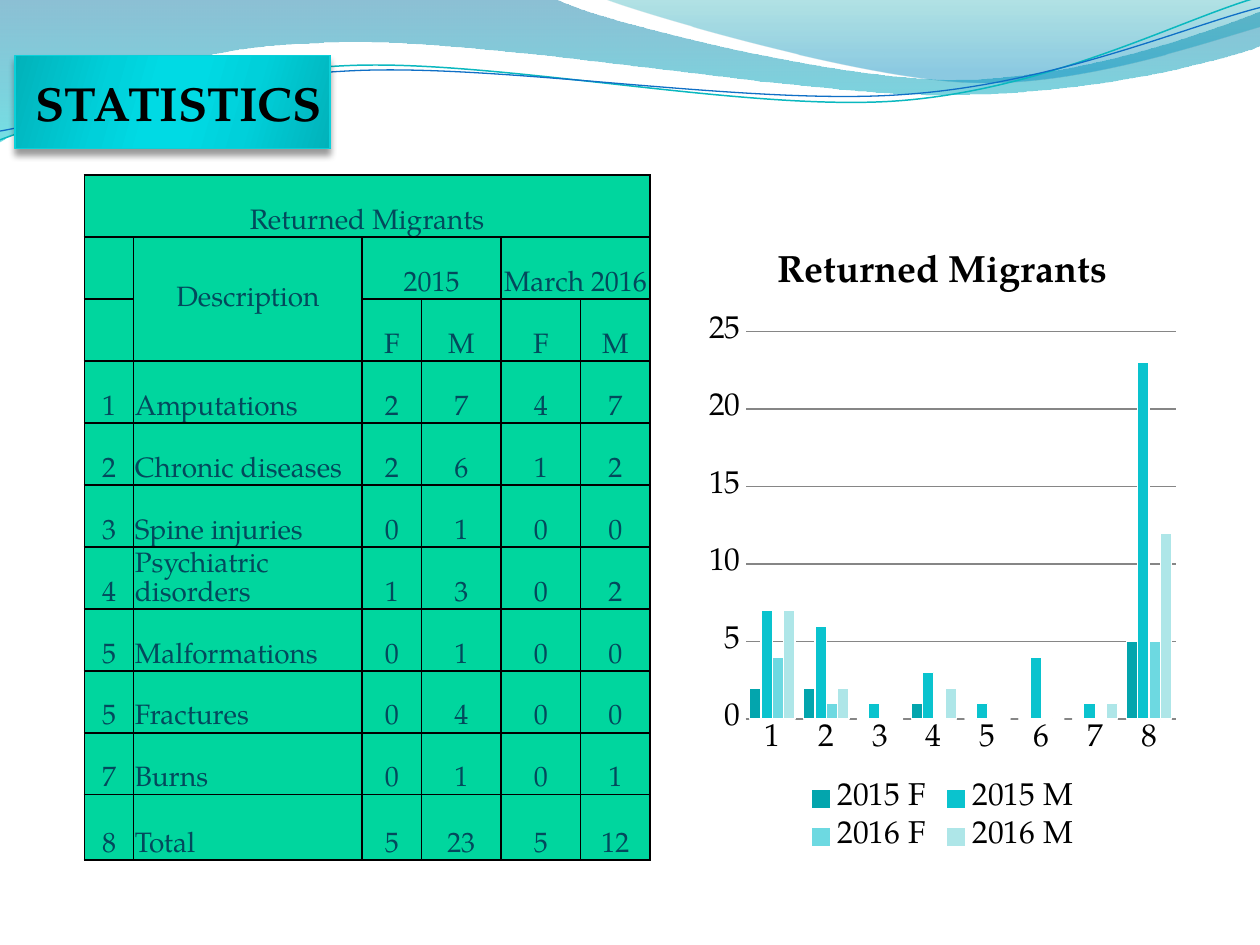
from math import cos, radians, sin

from lxml.etree import SubElement
from pptx import Presentation
from pptx.chart.data import CategoryChartData
from pptx.dml.color import RGBColor
from pptx.enum.chart import XL_CHART_TYPE, XL_LEGEND_POSITION, XL_TICK_MARK
from pptx.enum.text import MSO_ANCHOR, MSO_AUTO_SIZE, PP_ALIGN
from pptx.oxml.ns import qn
from pptx.util import Inches, Pt

FONT = "TeX Gyre Pagella"
COLORS = {"black": "000000", "white": "FFFFFF", "grid": "868686", "cell": "00D69E",
          "cell_text": "03495C", "title_line": "0BD0D9", "teal_line": "0AB8BF", "blue_line": "0F6FC6"}

HEADING = "Returned Migrants"
ROWS = [
    ("1", "Amputations", 2, 7, 4, 7),
    ("2", "Chronic diseases", 2, 6, 1, 2),
    ("3", "Spine injuries", 0, 1, 0, 0),
    ("4", "Psychiatric disorders", 1, 3, 0, 2),
    ("5", "Malformations", 0, 1, 0, 0),
    ("5", "Fractures", 0, 4, 0, 0),
    ("7", "Burns", 0, 1, 0, 1),
    ("8", "Total", 5, 23, 5, 12),
]
HEADER = [
    (HEADING, "", "", "", "", ""),
    ("", "Description", "2015", "", "March 2016", ""),
    ("", "", "F", "M", "F", "M"),
]
MERGES = [((0, 0), (0, 5)), ((1, 1), (2, 1)), ((1, 2), (1, 3)), ((1, 4), (1, 5))]
COL_SHARES = [0.39, 1.81, 0.47, 0.63, 0.63, 0.55]
TABLE_WIDTH, TABLE_HEIGHT, LAST_ROW_HEIGHT = 4.49, 5.44, 0.52
SERIES = [("2015 F", "03A5AD"), ("2015 M", "0AC3CE"), ("2016 F", "6DD9E1"), ("2016 M", "AEE6E8")]

# Outlines: a pair is a straight step, six numbers are a cubic curve
WAVES = [
    ([(0, 0), (4.4, -0.01), (4.76, 0.17, 6.64, 0.63, 7.58, 0.63), (8.53, 0.63, 9.58, 0.26, 10, 0.09),
      (10.01, 0.36), (9.83, 0.44, 8.7, 0.76, 7.46, 0.75), (6.22, 0.75, 3.82, 0.28, 2.57, 0.34),
      (1.29, 0.36, 0.46, 0.83, -0.01, 1.13)],
     [(0, "0074A1", 45), (100, "00C6CF", 55)]),
    ([(4.79, -0.01), (5.09, 0.11, 6.82, 0.62, 7.69, 0.65), (8.56, 0.69, 9.61, 0.32, 10, 0.21), (10, 0)],
     [(0, "00A1A9", 30), (80, "008BBF", 45)]),
]
WAVE_LINES = [
    ([(0, 1.11), (0.48, 0.93, 1.58, 0.57, 2.77, 0.52), (3.95, 0.47, 5.93, 0.89, 7.13, 0.8),
      (8.33, 0.71, 9.38, 0.15, 9.98, -0.02)], "teal_line", 0.85),
    ([(0, 1.04), (0.47, 0.96, 1.64, 0.61, 2.83, 0.56), (4.03, 0.51, 5.97, 0.84, 7.17, 0.75),
      (8.36, 0.67, 9.41, 0.21, 10, 0.06)], "blue_line", 0.75),
]
LINE_TILT, LINE_CENTRE = -2.7, (4.99, 0.58)
TITLE_STOPS = [(0, "01B2BA", 100), (30, "00D0DA", 100), (45, "00DAE4", 100),
               (55, "00DAE4", 100), (73, "00D0DA", 100), (100, "01B2BA", 100)]


def rgb(name):
    return RGBColor.from_string(COLORS[name])


def style_font(font, size, color, bold=False):
    font.name, font.size, font.bold = FONT, Pt(size), bold
    font.color.rgb = rgb(color)


def add_color(parent, value, opacity=100):
    clr = SubElement(parent, qn("a:srgbClr"), val=value)
    if opacity < 100:
        SubElement(clr, qn("a:alpha"), val=str(opacity * 1000))


def gradient_fill(shape, stops, angle):
    """Fill with (position %, colour, opacity %) stops; angle runs clockwise."""
    shape.fill.gradient()
    grad = shape.element.spPr.find(qn("a:gradFill"))
    for child in list(grad):
        grad.remove(child)
    stop_list = SubElement(grad, qn("a:gsLst"))
    for pos, value, opacity in stops:
        add_color(SubElement(stop_list, qn("a:gs"), pos=str(pos * 1000)), value, opacity)
    SubElement(grad, qn("a:lin"), ang=str(angle * 60000), scaled="0")


def add_outline(s, outline, close, tilt=0):
    """Draw an outline with true curves; a tilted one is levelled, then rotated as a shape."""
    (cx, cy), a = LINE_CENTRE, radians(-tilt)
    points = []
    for part in outline:
        for x, y in zip(part[::2], part[1::2]):
            dx, dy = x - cx, y - cy
            points.append((Inches(cx + dx * cos(a) - dy * sin(a)), Inches(cy + dx * sin(a) + dy * cos(a))))
    builder = s.shapes.build_freeform(*points[0])
    builder.add_line_segments(points[1:], close=close)
    shape = builder.convert_to_shape()
    shape.shadow.inherit = False
    shape.rotation = tilt
    steps = iter(list(shape.element.spPr.iter(qn("a:lnTo"))))
    for part in outline[1:]:
        first = next(steps)
        if len(part) == 6:
            first.tag = qn("a:cubicBezTo")
            for _ in range(2):
                extra = next(steps)
                first.append(extra[0])
                extra.getparent().remove(extra)
    return shape


def add_waves(s):
    for outline, stops in WAVES:
        wave = add_outline(s, outline, True)
        gradient_fill(wave, stops, 90)
        wave.line.fill.background()
    for outline, color, width in WAVE_LINES:
        curve = add_outline(s, outline, False, LINE_TILT)
        curve.fill.background()
        curve.line.color.rgb, curve.line.width = rgb(color), Pt(width)


def format_title(s):
    title = s.shapes.title
    s.shapes.element.append(title.element)  # in front of the waves
    title.left, title.top, title.width, title.height = map(Inches, (0.12, 0.44, 2.5, 0.74))
    gradient_fill(title, TITLE_STOPS, 16)
    title.line.color.rgb, title.line.width = rgb("title_line"), Pt(0.75)
    effects = SubElement(title.element.spPr, qn("a:effectLst"))
    shadow = SubElement(effects, qn("a:outerShdw"), blurRad=str(Pt(4)), dist=str(Pt(3.3)),
                        dir="5400000", rotWithShape="0")
    add_color(shadow, COLORS["black"], 40)
    tf = title.text_frame
    tf.text = "STATISTICS"
    tf.auto_size, tf.vertical_anchor = MSO_AUTO_SIZE.NONE, MSO_ANCHOR.MIDDLE
    tf.margin_left, tf.margin_right, tf.margin_top, tf.margin_bottom = Inches(0.09), 0, 0, 0
    p = tf.paragraphs[0]
    p.alignment = PP_ALIGN.CENTER
    style_font(p.font, 27.3, "black", True)


def format_cell(cell, text, centred, middle):
    cell.fill.solid()
    cell.fill.fore_color.rgb = rgb("cell")
    cell.margin_left = cell.margin_right = cell.margin_top = Inches(0.01)
    cell.margin_bottom = 0
    cell.vertical_anchor = MSO_ANCHOR.MIDDLE if middle else MSO_ANCHOR.BOTTOM
    tcPr = cell._tc.get_or_add_tcPr()
    for i, side in enumerate(("lnL", "lnR", "lnT", "lnB")):
        ln = SubElement(tcPr, qn("a:" + side), w=str(Pt(1)))
        add_color(SubElement(ln, qn("a:solidFill")), COLORS["black"])
        tcPr.insert(i, ln)
    cell.text = text
    p = cell.text_frame.paragraphs[0]
    p.alignment = PP_ALIGN.CENTER if centred else PP_ALIGN.LEFT
    style_font(p.font, 16, "cell_text")


def add_migrant_table(s):
    rows = HEADER + ROWS
    table = s.shapes.add_table(len(rows), len(COL_SHARES), Inches(0.67), Inches(1.39),
                               Inches(TABLE_WIDTH), Inches(TABLE_HEIGHT)).table
    for col, share in zip(table.columns, COL_SHARES):
        col.width = Inches(TABLE_WIDTH * share / sum(COL_SHARES))
    for row in table.rows:
        row.height = Inches((TABLE_HEIGHT - LAST_ROW_HEIGHT) / (len(rows) - 1))
    table.rows[len(rows) - 1].height = Inches(LAST_ROW_HEIGHT)
    for r, values in enumerate(rows):
        for c, value in enumerate(values):
            is_name = c == 1 and r >= len(HEADER)
            format_cell(table.cell(r, c), str(value), not is_name, value == "Description")
    for first, last in MERGES:
        table.cell(*first).merge(table.cell(*last))


def add_migrant_chart(s):
    data = CategoryChartData()
    data.categories = [str(i) for i in range(1, len(ROWS) + 1)]
    for i, (name, _) in enumerate(SERIES):
        data.add_series(name, [row[i + 2] for row in ROWS])
    chart = s.shapes.add_chart(XL_CHART_TYPE.COLUMN_CLUSTERED, Inches(5.55), Inches(1.78),
                               Inches(3.86), Inches(5.04), data).chart
    style_font(chart.font, 18, "black")
    chart.has_title = True
    chart.chart_title.include_in_layout = False
    chart.chart_title.text_frame.text = HEADING
    style_font(chart.chart_title.text_frame.paragraphs[0].font, 21.6, "black", True)
    chart.has_legend = True
    chart.legend.position = XL_LEGEND_POSITION.BOTTOM
    chart.legend.include_in_layout = False
    for axis in (chart.category_axis, chart.value_axis):
        axis.major_tick_mark = axis.minor_tick_mark = XL_TICK_MARK.NONE
    chart.category_axis.format.line.color.rgb = rgb("grid")
    chart.value_axis.format.line.fill.background()
    chart.value_axis.major_gridlines.format.line.color.rgb = rgb("grid")
    plot = chart.plots[0]
    plot.gap_width, plot.overlap, plot.vary_by_categories = 75, 0, False
    for series, (_, color) in zip(plot.series, SERIES):
        series.format.fill.solid()
        series.format.fill.fore_color.rgb = RGBColor.from_string(color)
        series.format.line.color.rgb, series.format.line.width = rgb("white"), Pt(0.75)


prs = Presentation()
prs.slide_width, prs.slide_height = Inches(10), Inches(7.5)
s = prs.slides.add_slide(prs.slide_layouts[5])
add_waves(s)
format_title(s)
add_migrant_table(s)
add_migrant_chart(s)
prs.save("out.pptx")
